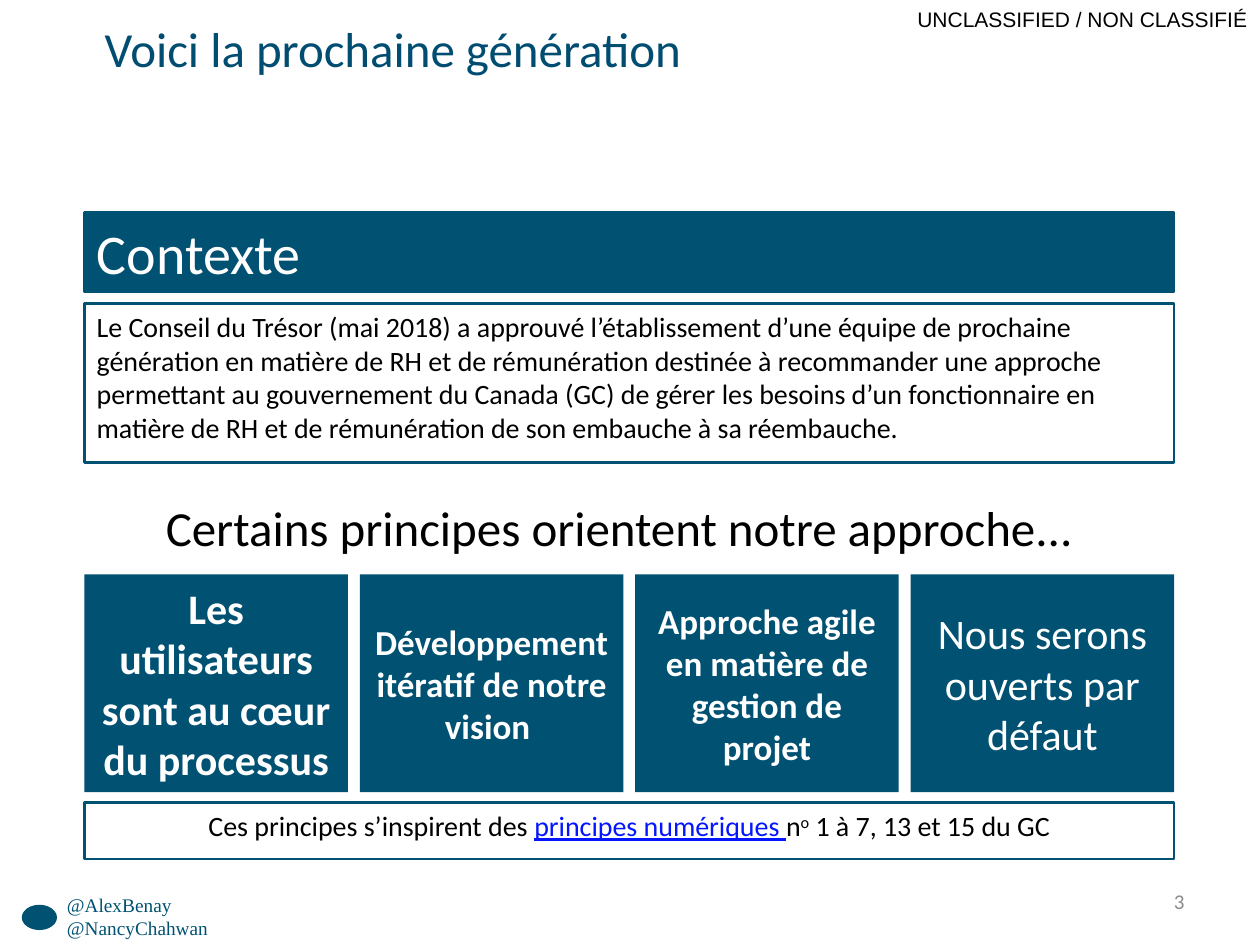
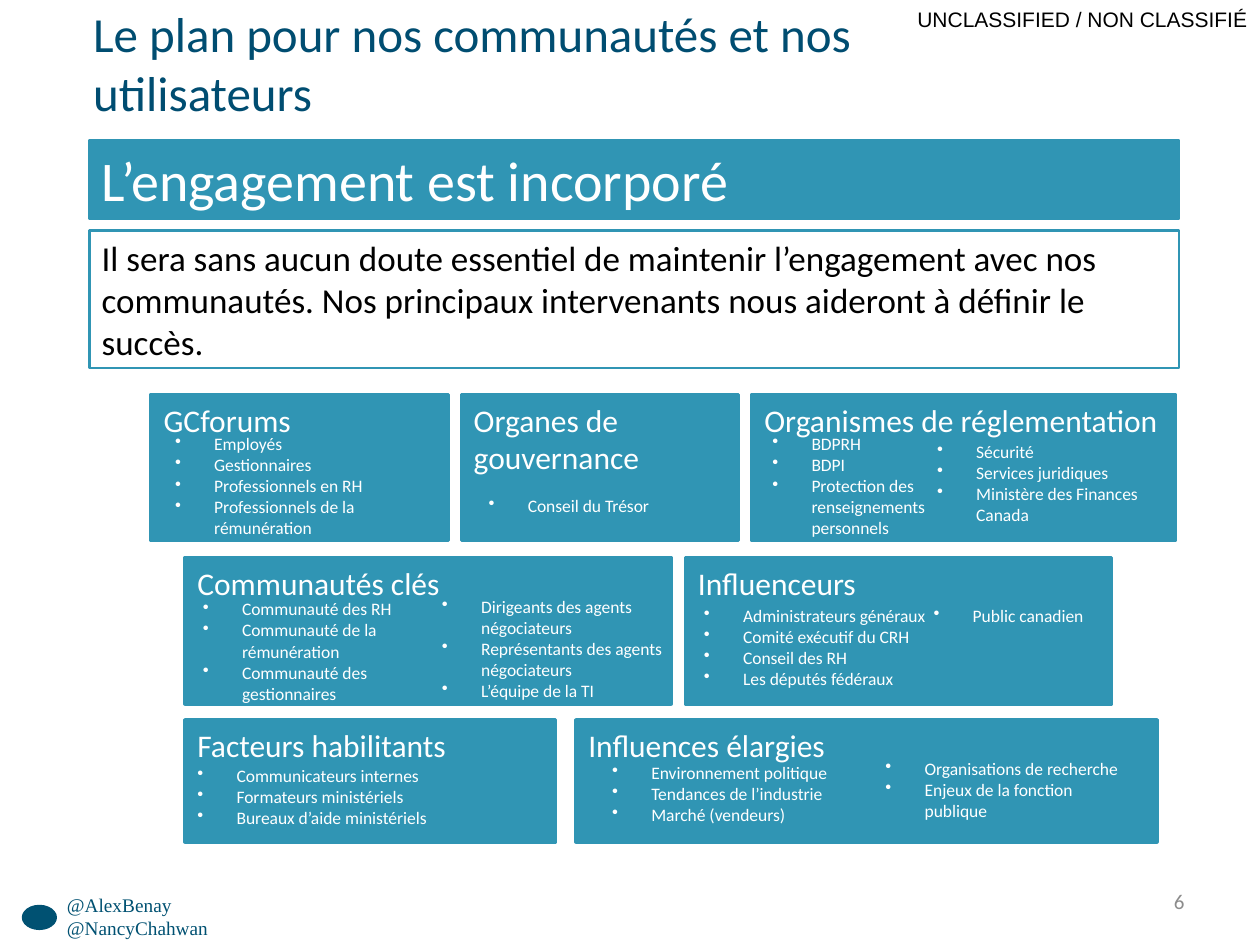
from lxml import etree
from pptx import Presentation
from pptx.dml.color import RGBColor
from pptx.enum.shapes import MSO_SHAPE
from pptx.enum.text import MSO_ANCHOR, PP_ALIGN
from pptx.oxml.ns import qn
from pptx.util import Cm, Pt

RECT, PROCESS, OVAL = MSO_SHAPE.RECTANGLE, MSO_SHAPE.FLOWCHART_PROCESS, MSO_SHAPE.OVAL
LEFT, CENTER, RIGHT = PP_ALIGN.LEFT, PP_ALIGN.CENTER, PP_ALIGN.RIGHT
TOP, MIDDLE = MSO_ANCHOR.TOP, MSO_ANCHOR.MIDDLE

COLORS = {
    "navy": "005172", "title": "004D71", "teal": "3095B4", "link": "0415FF",
    "white": "FFFFFF", "black": "000000", "grey": "8C8C8C",
}
FONT = "Calibri"

# Shared content
CLASSIFICATION = "UNCLASSIFIED / NON CLASSIFIÉ"
HANDLES = ["@AlexBenay", "@NancyChahwan"]

# Slide 1 content
CONTEXT_TITLE = "Voici la prochaine génération"
CONTEXT_BAND = "Contexte"
CONTEXT_TEXT = (
    "Le Conseil du Trésor (mai 2018) a approuvé l’établissement d’une équipe de "
    "prochaine génération en matière de RH et de rémunération destinée à recommander "
    "une approche permettant au gouvernement du Canada (GC) de gérer les besoins d’un "
    "fonctionnaire en matière de RH et de rémunération de son embauche à sa réembauche."
)
PRINCIPLES_HEADING = "Certains principes orientent notre approche... "
PRINCIPLES = [  # text, size, bold
    ("Les utilisateurs sont au cœur du processus", 24, True),
    ("Développement itératif de notre vision ", 20, True),
    ("Approche agile en matière de gestion de projet", 20, True),
    ("Nous serons ouverts par défaut", 24, False),
]
SOURCE_NOTE = [  # text, style
    ("Ces principes s’inspirent des ", None),
    ("principes numériques ", "link"),
    ("n", None),
    ("o", "superscript"),
    (" 1 à 7, 13 et 15 du GC", None),
]

# Slide 2 content
PLAN_TITLE = "Le plan pour nos communautés et nos utilisateurs"
PLAN_BAND = "L’engagement est incorporé"
PLAN_TEXT = (
    "Il sera sans aucun doute essentiel de maintenir l’engagement avec nos communautés. "
    "Nos principaux intervenants nous aideront à définir le succès."
)
STAKEHOLDER_ROWS = [  # top, height, groups: (name, left, width, lists: (left, top, width, items))
    (7.95, 2.95, [
        ("GCforums", 3.05, 5.99, [
            (3.28, 8.61, 5.59, ["Employés", "Gestionnaires", "Professionnels en RH",
                                "Professionnels de la rémunération"])]),
        ("Organes de gouvernance", 9.3, 5.59, [
            (9.6, 9.86, 5.49, ["Conseil du Trésor"])]),
        ("Organismes de réglementation", 15.16, 8.53, [
            (15.32, 8.61, 4.17, ["BDPRH", "BDPI",
                                 "Protection des renseignements personnels"]),
            (18.64, 8.76, 5.49, ["Sécurité", "Services juridiques",
                                 "Ministère des Finances Canada"])]),
    ]),
    (11.24, 2.95, [
        ("Communautés clés", 3.73, 9.8, [
            (3.84, 11.94, 5.49, ["Communauté des RH", "Communauté de la rémunération",
                                 "Communauté des gestionnaires"]),
            (8.66, 11.89, 5.49, ["Dirigeants des agents négociateurs",
                                 "Représentants des agents négociateurs",
                                 "L’équipe de la TI"])]),
        ("Influenceurs", 13.82, 8.59, [
            (13.94, 12.07, 5.1, ["Administrateurs généraux", "Comité exécutif du CRH",
                                 "Conseil des RH", "Les députés fédéraux"]),
            (18.57, 12.07, 3.8, ["Public canadien"])]),
    ]),
    (14.51, 2.46, [
        ("Facteurs habilitants", 3.73, 7.47, [
            (3.73, 15.29, 5.49, ["Communicateurs internes", "Formateurs ministériels",
                                 "Bureaux d’aide ministériels"])]),
        ("Influences élargies", 11.61, 11.71, [
            (12.09, 15.24, 5.49, ["Environnement politique", "Tendances de l’industrie",
                                  "Marché (vendeurs)"]),
            (17.6, 15.16, 5.49, ["Organisations de recherche",
                                 "Enjeux de la fonction publique"])]),
    ]),
]

# Layout, in centimetres
SLIDE_W, SLIDE_H = 25.4, 19.05
BLOCK_W, BAND_H, BLOCK_GAP = 21.97, 1.6, 0.23
CARD_TOP, CARD_H, CARD_GAP = 11.58, 4.39, 0.24
BULLET_INDENT = 0.79


def rgb(name):
    return RGBColor.from_string(COLORS[name])


def set_font(font, size, color, bold=False, name=FONT):
    font.name, font.size, font.bold = name, Pt(size), bold
    font.color.rgb = rgb(color)


def write(sp, lines, size, color, align=LEFT, anchor=TOP, bold=False, name=FONT):
    tf = sp.text_frame
    tf.word_wrap = True
    tf.vertical_anchor = anchor
    for i, line in enumerate(lines):
        p = tf.paragraphs[0] if i == 0 else tf.add_paragraph()
        p.text = line
        p.alignment = align
        set_font(p.font, size, color, bold, name)
    return tf


def add_text(s, box, lines, size, color, **style):
    sp = s.shapes.add_textbox(*map(Cm, box))
    return write(sp, lines, size, color, **style)


def add_box(s, box, fill, line=None, width=1.5, kind=RECT):
    sp = s.shapes.add_shape(kind, *map(Cm, box))
    sp.shadow.inherit = False
    sp.fill.solid()
    sp.fill.fore_color.rgb = rgb(fill)
    if line:
        sp.line.color.rgb = rgb(line)
        sp.line.width = Pt(width)
    else:
        sp.line.fill.background()
    return sp


def add_bullets(s, left, top, width, items):
    tf = add_text(s, (left, top, width, 0.25 + 0.43 * len(items)), items, 10, "white")
    for p in tf.paragraphs:
        pPr = p._p.get_or_add_pPr()
        pPr.set("marL", str(Cm(BULLET_INDENT)))
        pPr.set("indent", str(-Cm(BULLET_INDENT)))
        bullet = etree.Element(qn("a:buChar"), char="•")
        pPr.insert(0, bullet)


def add_slide(prs, number, title, title_box):
    s = prs.slides.add_slide(prs.slide_layouts[6])
    add_text(s, (0, 0, SLIDE_W, 0.77), [CLASSIFICATION], 12, "black",
             align=RIGHT, name="Arial")
    add_box(s, (0.44, 18.24, 0.71, 0.51), "navy", kind=OVAL)
    add_text(s, (1.1, 17.88, 6.17, 1.19), HANDLES, 11, "navy", name="Times New Roman")
    add_text(s, (18.21, 17.65, 5.92, 1.02), [str(number)], 12, "grey",
             align=RIGHT, anchor=MIDDLE)
    tf = add_text(s, title_box, [title], 28, "title")
    tf.margin_left = tf.margin_top = tf.margin_right = tf.margin_bottom = 0
    return s


def add_block(s, left, top, band, text, text_h, text_size, color):
    """Coloured heading band with an outlined text box below it."""
    sp = add_box(s, (left, top, BLOCK_W, BAND_H), color, color)
    write(sp, [band], 32, "white", anchor=MIDDLE)
    sp = add_box(s, (left, top + BAND_H + BLOCK_GAP, BLOCK_W, text_h), "white", color)
    write(sp, [text], text_size, "black")


def build_context(prs):
    left = 1.7
    s = add_slide(prs, 3, CONTEXT_TITLE, (2.11, 0.38, 15.09, 2.44))
    add_block(s, left, 4.29, CONTEXT_BAND, CONTEXT_TEXT, 3.2, 16, "navy")
    add_text(s, (2.08, 9.91, 21.03, 1.45), [PRINCIPLES_HEADING], 28, "black", align=CENTER)

    # Principle cards
    card_w = (BLOCK_W - CARD_GAP * (len(PRINCIPLES) - 1)) / len(PRINCIPLES)
    for i, (text, size, bold) in enumerate(PRINCIPLES):
        sp = add_box(s, (left + i * (card_w + CARD_GAP), CARD_TOP, card_w, CARD_H), "navy")
        write(sp, [text], size, "white", align=CENTER, anchor=MIDDLE, bold=bold)

    # Source note
    sp = add_box(s, (left, 16.18, BLOCK_W, 1.14), "white", "navy")
    p = write(sp, [""], 16, "black", align=CENTER).paragraphs[0]
    for text, style in SOURCE_NOTE:
        r = p.add_run()
        r.text = text
        set_font(r.font, 16, "link" if style == "link" else "black")
        if style == "link":
            r.font.underline = True
        elif style == "superscript":
            r._r.get_or_add_rPr().set("baseline", "30000")


def build_plan(prs):
    s = add_slide(prs, 6, PLAN_TITLE, (1.88, 0.08, 17.09, 2.44))
    add_block(s, 1.8, 2.82, PLAN_BAND, PLAN_TEXT, 2.77, 20, "teal")

    # Stakeholder groups
    for top, height, groups in STAKEHOLDER_ROWS:
        for name, left, width, lists in groups:
            sp = add_box(s, (left, top, width, height), "teal", "teal", 2, PROCESS)
            write(sp, [name], 18, "white")
            for bullets in lists:
                add_bullets(s, *bullets)


def main():
    prs = Presentation()
    prs.slide_width, prs.slide_height = Cm(SLIDE_W), Cm(SLIDE_H)
    build_context(prs)
    build_plan(prs)
    prs.save("out.pptx")


if __name__ == "__main__":
    main()
